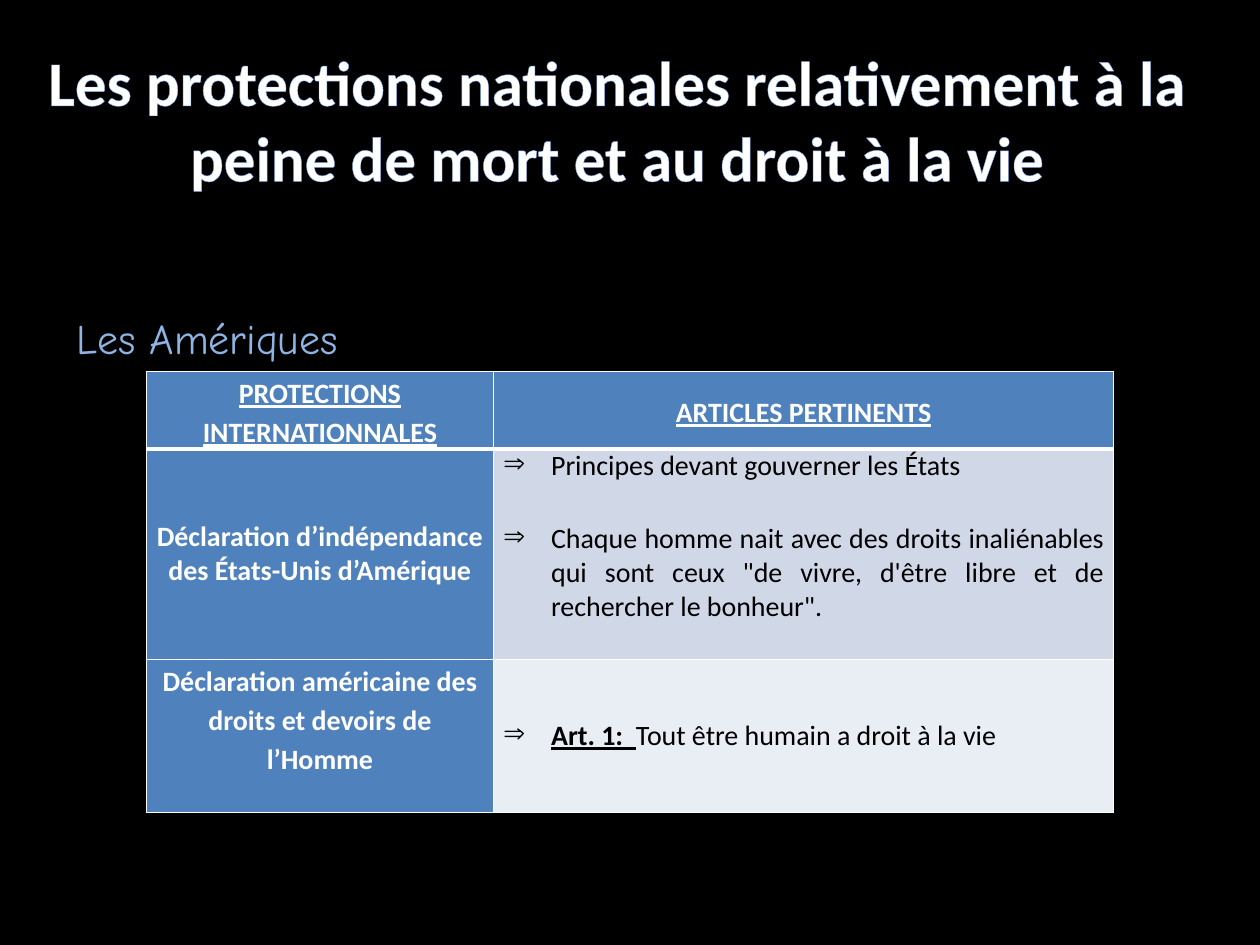
from pptx import Presentation
from pptx.dml.color import RGBColor
from pptx.enum.text import MSO_ANCHOR, PP_ALIGN
from pptx.oxml.ns import qn
from pptx.util import Cm, Pt
from lxml.etree import SubElement

BLACK = RGBColor(0x00, 0x00, 0x00)
WHITE = RGBColor(0xFF, 0xFF, 0xFF)
BLUE = RGBColor(0x4F, 0x81, 0xBD)
SKY = RGBColor(0x8E, 0xB4, 0xE3)
OUTLINE = RGBColor(0x7E, 0xA6, 0xEA)
BAND_DARK = RGBColor(0xD0, 0xD8, 0xE8)
BAND_LIGHT = RGBColor(0xE9, 0xED, 0xF4)


def add_line(parent, tag, color, width):
    line = SubElement(parent, qn(tag), w=str(Pt(width)))
    fill = SubElement(line, qn("a:solidFill"))
    SubElement(fill, qn("a:srgbClr"), val=str(color))


def write(paragraph, text, size=16, font="Calibri", color=WHITE, bold=False,
          underline=False, align=PP_ALIGN.LEFT, spacing=None, after=0,
          bullet=None, outline=None):
    paragraph.alignment = align
    paragraph.space_after = Pt(after)
    if spacing:
        paragraph.line_spacing = spacing
    if bullet and not paragraph.runs:
        properties = paragraph._p.get_or_add_pPr()
        properties.set("marL", str(Cm(0.97)))
        properties.set("indent", str(-Cm(0.97)))
        SubElement(properties, qn("a:buChar"), char=bullet)
    run = paragraph.add_run()
    run.text = text
    if outline:
        add_line(run._r.get_or_add_rPr(), "a:ln", outline, 2.48)
    run.font.size = Pt(size)
    run.font.name = font
    run.font.bold = bold
    run.font.underline = underline
    run.font.color.rgb = color


deck = Presentation()
deck.slide_width, deck.slide_height = Cm(25.4), Cm(19.05)
slide = deck.slides.add_slide(deck.slide_layouts[6])
slide.background.fill.solid()
slide.background.fill.fore_color.rgb = BLACK

# Title
title = slide.shapes.add_textbox(Cm(0), Cm(0.74), Cm(24.89), Cm(3.33)).text_frame
title.word_wrap = True
write(title.paragraphs[0],
      "Les protections nationales relativement à la peine de mort et au droit à la vie",
      size=36, bold=True, align=PP_ALIGN.CENTER, outline=OUTLINE)

# Table grid
protections = slide.shapes.add_table(3, 2, Cm(2.95), Cm(7.49), Cm(19.5), Cm(8.89)).table
for column, width in zip(protections.columns, (7, 12.5)):
    column.width = Cm(width)
for row, height in zip(protections.rows, (1.56, 4.24, 3.09)):
    row.height = Cm(height)

fills = ((BLUE, BLUE), (BLUE, BAND_DARK), (BLUE, BAND_LIGHT))
anchors = ((MSO_ANCHOR.TOP, MSO_ANCHOR.MIDDLE),
           (MSO_ANCHOR.MIDDLE, MSO_ANCHOR.TOP),
           (MSO_ANCHOR.TOP, MSO_ANCHOR.MIDDLE))
for r in range(3):
    for c in range(2):
        cell = protections.cell(r, c)
        cell.margin_left = cell.margin_right = Cm(0.19)
        cell.margin_top = cell.margin_bottom = Cm(0)
        cell.vertical_anchor = anchors[r][c]
        # The rule under the header row is thicker
        widths = {"L": 1, "R": 1, "T": 3 if r == 1 else 1, "B": 3 if r == 0 else 1}
        for side, width in widths.items():
            add_line(cell._tc.get_or_add_tcPr(), "a:ln" + side, WHITE, width)
        cell.fill.solid()
        cell.fill.fore_color.rgb = fills[r][c]

# Header row
for c, heading in enumerate(("PROTECTIONS INTERNATIONNALES", "ARTICLES PERTINENTS")):
    write(protections.cell(0, c).text_frame.paragraphs[0], heading, bold=True,
          underline=True, align=PP_ALIGN.CENTER, spacing=1.15)

# Declarations
declarations = (("Déclaration d’indépendance des États-Unis d’Amérique", None),
                ("Déclaration américaine des droits et devoirs de l’Homme", 1.15))
for r, (declaration, spacing) in enumerate(declarations, start=1):
    write(protections.cell(r, 0).text_frame.paragraphs[0], declaration, bold=True,
          align=PP_ALIGN.CENTER, spacing=spacing)

# Articles
article = dict(color=BLACK, align=PP_ALIGN.JUSTIFY, bullet="⇒")
principles = protections.cell(1, 1).text_frame
write(principles.paragraphs[0], "Principes devant gouverner les États", after=22, **article)
write(principles.add_paragraph(),
      "Chaque homme nait avec des droits inaliénables qui sont ceux "
      "\"de vivre, d'être libre et de rechercher le bonheur\".", **article)
right_to_life = protections.cell(2, 1).text_frame.paragraphs[0]
write(right_to_life, "Art. 1:  ", bold=True, underline=True, **article)
write(right_to_life, "Tout être humain a droit à la vie", **article)

# Region
region = slide.shapes.add_textbox(Cm(1.3), Cm(6.17), Cm(10.59), Cm(1.27)).text_frame
region.word_wrap = True
write(region.paragraphs[0], "Les Amériques", size=24, font="Comic Neue", color=SKY)

deck.save("out.pptx")
